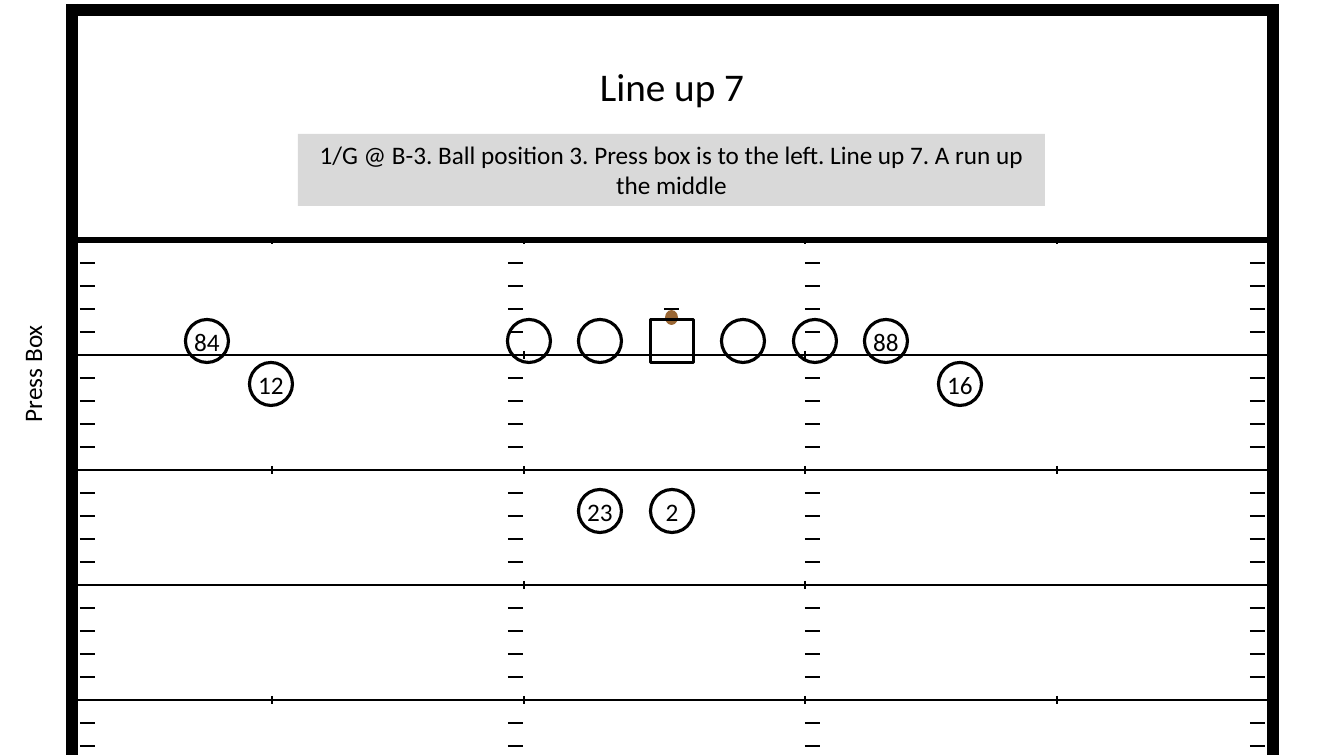
from lxml.etree import SubElement
from pptx import Presentation
from pptx.dml.color import RGBColor
from pptx.enum.shapes import MSO_CONNECTOR, MSO_SHAPE as Shape
from pptx.enum.text import MSO_ANCHOR as Anchor, MSO_AUTO_SIZE as AutoSize, PP_ALIGN as Align
from pptx.oxml.ns import qn
from pptx.util import Pt

EMU_PER_PX = 914400 / 100.8
THEME = {
    "font": "Calibri",
    "ink": RGBColor(0, 0, 0),
    "panel": RGBColor(217, 217, 217),
    "ball": RGBColor(153, 102, 51),
    "title": 28,
    "text": 18,
}


def draw_line(x1, y1, x2, y2, weight=1.25):
    ends = [round(value * EMU_PER_PX) for value in (x1, y1, x2, y2)]
    line = page.shapes.add_connector(MSO_CONNECTOR.STRAIGHT, *ends)
    line.line.color.rgb = THEME["ink"]
    line.line.width = Pt(weight)
    SubElement(line.element.spPr, qn("a:effectLst"))


def write(box, text, size="text", align=Align.CENTER, anchor=Anchor.TOP):
    frame = box.text_frame
    frame.vertical_anchor = anchor
    para = frame.paragraphs[0]
    para.alignment = align
    span = para.add_run()
    span.text = text
    span.font.name = THEME["font"]
    span.font.size = Pt(THEME[size])
    span.font.color.rgb = THEME["ink"]


deck = Presentation()
deck.slide_width = round(1344 * EMU_PER_PX)
deck.slide_height = round(756 * EMU_PER_PX)
page = deck.slides.add_slide(deck.slide_layouts[5])

FIELD_LEFT, FIELD_RIGHT, GOAL_LINE, YARD = 77, 1267, 240, 23
HASH_COLUMNS = (80, 508, 805, 1250)
INNER_TICKS = (524, 805)
ALL_TICKS = (272, 524, 805, 1057)

for yard in range(23):
    y = GOAL_LINE + yard * YARD
    if yard % 5:
        for x in HASH_COLUMNS:
            draw_line(x, y, x + 15, y)
        continue
    ten_yard_line = yard % 10 == 0
    weight = 4 if yard == 0 else 2 if ten_yard_line else 1.25
    draw_line(FIELD_LEFT, y, FIELD_RIGHT, y, weight)
    for x in ALL_TICKS if ten_yard_line else INNER_TICKS:
        draw_line(x, y + 1 if yard == 0 else y - 4, x, y + 4)

draw_line(664, GOAL_LINE + 3 * YARD, 679, GOAL_LINE + 3 * YARD)
for x in (72, 1273):
    draw_line(x, 4, x, 755, 8)
draw_line(FIELD_LEFT, 10, FIELD_RIGHT, 10, 8)

ball = page.shapes.add_shape(
    Shape.OVAL, *[round(value * EMU_PER_PX) for value in (664, 311, 15, 13)])
ball.rotation = 90
ball.shadow.inherit = False
ball.fill.solid()
ball.fill.fore_color.rgb = THEME["ball"]
ball.line.fill.background()

press_box = page.shapes.add_textbox(
    *[round(value * EMU_PER_PX) for value in (12, 324, 50, 108)])
press_box.element.txBody.bodyPr.set("vert", "vert270")
press_box.text_frame.word_wrap = False
press_box.text_frame.auto_size = AutoSize.SHAPE_TO_FIT_TEXT
write(press_box, "Press Box", align=Align.LEFT)

PLAYER, CENTER_X, TWO_GAPS = 43, 672, 143
LINE_Y, SLOT_Y, BACK_Y = 341, 384, 511
line_spots = {slot: CENTER_X + slot * TWO_GAPS // 2 for slot in range(-2, 4)}
players = [(Shape.RECTANGLE if slot == 0 else Shape.OVAL, x, LINE_Y, "88" if slot == 3 else "")
           for slot, x in line_spots.items()]
players += [(Shape.OVAL, x, y, number) for x, y, number in (
    (CENTER_X, BACK_Y, "2"),
    (line_spots[-1], BACK_Y, "23"),
    (207, LINE_Y, "84"),
    (960, SLOT_Y, "16"),
    (271, SLOT_Y, "12"),
)]
for kind, x, y, number in players:
    corner = (x - PLAYER / 2, y - PLAYER / 2, PLAYER, PLAYER)
    player = page.shapes.add_shape(kind, *[round(value * EMU_PER_PX) for value in corner])
    player.shadow.inherit = False
    player.fill.background()
    player.line.color.rgb = THEME["ink"]
    player.line.width = Pt(2.25)
    if number:
        frame = player.text_frame
        frame.margin_left = frame.margin_right = frame.margin_top = frame.margin_bottom = 0
        write(player, number, anchor=Anchor.MIDDLE)

title = page.shapes.title
title.left, title.top, title.width, title.height = [
    round(value * EMU_PER_PX) for value in (589, 57, 166, 57)]
title.text_frame.word_wrap = False
title.text_frame.auto_size = AutoSize.SHAPE_TO_FIT_TEXT
write(title, "Line up 7", size="title")

call = page.shapes.add_shape(
    Shape.RECTANGLE, *[round(value * EMU_PER_PX) for value in (298, 134, 747, 72)])
call.shadow.inherit = False
call.fill.solid()
call.fill.fore_color.rgb = THEME["panel"]
call.line.fill.background()
call.text_frame.word_wrap = True
call.text_frame.auto_size = AutoSize.SHAPE_TO_FIT_TEXT
write(call, "1/G @ B-3. Ball position 3. Press box is to the left. Line up 7. A run up the middle")

deck.save("out.pptx")
